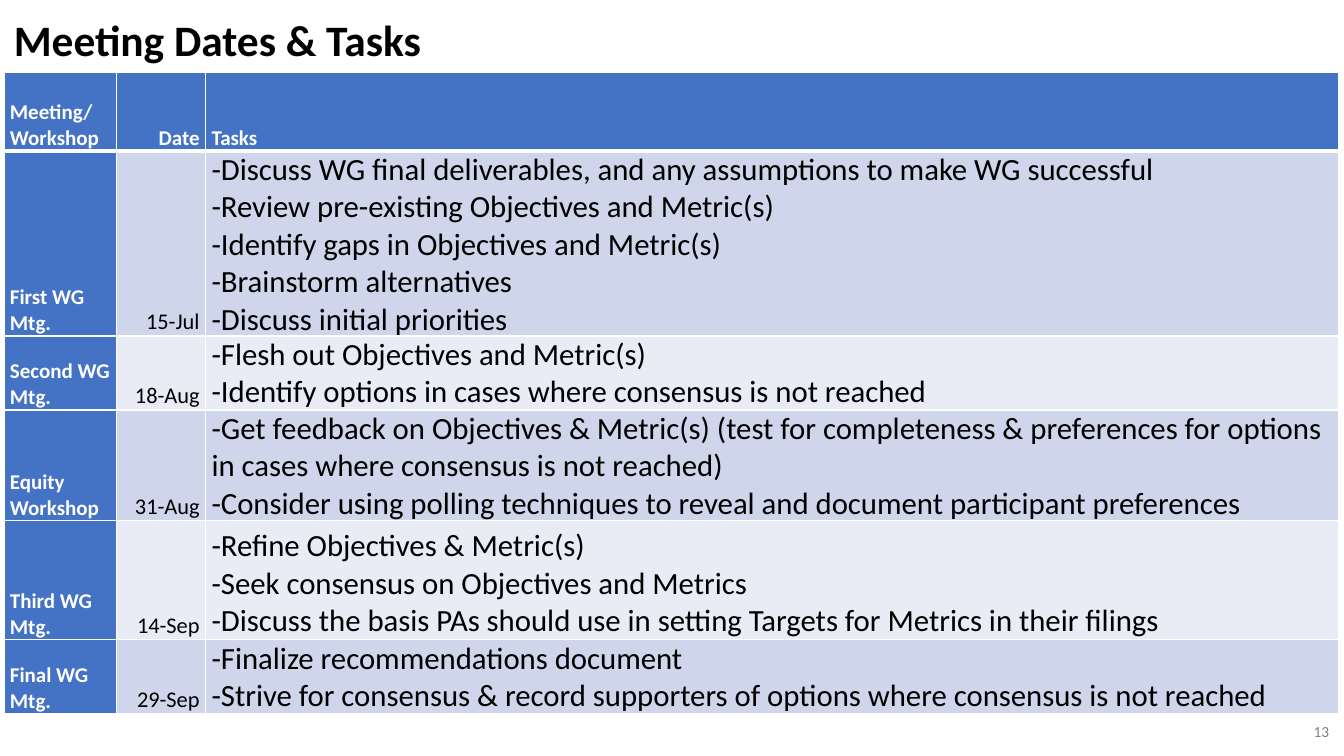
from dataclasses import dataclass

from lxml import etree
from pptx import Presentation
from pptx.dml.color import RGBColor
from pptx.enum.text import MSO_ANCHOR, PP_ALIGN
from pptx.oxml.ns import qn
from pptx.util import Cm, Pt

LEFT, RIGHT = PP_ALIGN.LEFT, PP_ALIGN.RIGHT
MIDDLE, BOTTOM = MSO_ANCHOR.MIDDLE, MSO_ANCHOR.BOTTOM


@dataclass(frozen=True)
class Theme:
    font: str = "Calibri"
    black: str = "000000"
    white: str = "FFFFFF"
    grey: str = "808080"
    blue: str = "4472C4"
    bands: tuple = ("CFD5EA", "E9EBF5")
    title_size: int = 31
    task_size: int = 22
    date_size: int = 16
    head_size: int = 15
    number_size: int = 11


HEADINGS = ("Meeting/ Workshop", "Date", "Tasks")
MEETINGS = [
    ("First WG Mtg.", "15-Jul", [
        "-Discuss WG final deliverables, and any assumptions to make WG successful",
        "-Review pre-existing Objectives and Metric(s)",
        "-Identify gaps in Objectives and Metric(s)",
        "-Brainstorm alternatives",
        "-Discuss initial priorities"]),
    ("Second WG Mtg.", "18-Aug", [
        "-Flesh out Objectives and Metric(s)",
        "-Identify options in cases where consensus is not reached"]),
    ("Equity Workshop", "31-Aug", [
        "-Get feedback on Objectives & Metric(s) (test for completeness & "
        "preferences for options in cases where consensus is not reached)",
        "-Consider using polling techniques to reveal and document participant preferences"]),
    ("Third WG Mtg.", "14-Sep", [
        "-Refine Objectives & Metric(s)",
        "-Seek consensus on Objectives and Metrics",
        "-Discuss the basis PAs should use in setting Targets for Metrics in their filings"]),
    ("Final WG Mtg.", "29-Sep", [
        "-Finalize recommendations document",
        "-Strive for consensus & record supporters of options where consensus is not reached"]),
]
COLUMN_WIDTHS = (2.84, 2.24, 28.55)
ROW_HEIGHTS = (1.98, 4.47, 1.5, 2.26, 3, 1.5)


class SlideBuilder:
    def __init__(self, slide, theme):
        self.s = slide
        self.theme = theme

    def add_lines(self, tf, lines, size, color, bold=False, align=LEFT):
        """Fill a text frame with one paragraph per line."""
        for i, line in enumerate(lines):
            p = tf.paragraphs[0] if i == 0 else tf.add_paragraph()
            p.alignment = align
            r = p.add_run()
            r.text = line
            r.font.name = self.theme.font
            r.font.size = Pt(size)
            r.font.bold = bold
            r.font.color.rgb = RGBColor.from_string(color)

    def text(self, x, y, w, h, line, size, color, **style):
        """Add a one-line text box and return its paragraph."""
        tf = self.s.shapes.add_textbox(Cm(x), Cm(y), Cm(w), Cm(h)).text_frame
        tf.word_wrap = True
        tf.vertical_anchor = MIDDLE
        self.add_lines(tf, [line], size, color, **style)
        return tf.paragraphs[0]

    def table(self, x, y, widths, heights):
        frame = self.s.shapes.add_table(len(heights), len(widths), Cm(x), Cm(y),
                                        Cm(sum(widths)), Cm(sum(heights)))
        table = frame.table
        for column, width in zip(table.columns, widths):
            column.width = Cm(width)
        for row, height in zip(table.rows, heights):
            row.height = Cm(height)
        return table

    def borders(self, cell, top, bottom):
        tc_pr = cell._tc.get_or_add_tcPr()
        for side, width in (("L", 1), ("R", 1), ("T", top), ("B", bottom)):
            ln = etree.SubElement(tc_pr, qn(f"a:ln{side}"), w=str(Pt(width)))
            fill = etree.SubElement(ln, qn("a:solidFill"))
            etree.SubElement(fill, qn("a:srgbClr"), val=self.theme.white)

    def cell(self, cell, lines, fill, size, color, top=1, bottom=1, **style):
        cell.margin_left = cell.margin_right = Cm(0.15)
        cell.margin_top = cell.margin_bottom = 0
        cell.vertical_anchor = BOTTOM
        self.borders(cell, top, bottom)
        cell.fill.solid()
        cell.fill.fore_color.rgb = RGBColor.from_string(fill)
        self.add_lines(cell.text_frame, lines, size, color, **style)


def main():
    prs = Presentation()
    prs.slide_width, prs.slide_height = Cm(33.87), Cm(19.05)
    theme = Theme()
    b = SlideBuilder(prs.slides.add_slide(prs.slide_layouts[6]), theme)

    number = b.text(32.51, 17.93, 1.24, 1.02, "13", theme.number_size, theme.grey, align=RIGHT)
    number.space_after = Pt(6)

    table = b.table(0.1, 1.83, COLUMN_WIDTHS, ROW_HEIGHTS)
    for col, heading in enumerate(HEADINGS):
        b.cell(table.cell(0, col), [heading], theme.blue, theme.head_size, theme.white,
               bottom=3, bold=True, align=RIGHT if heading == "Date" else LEFT)
    for row, (meeting, date, tasks) in enumerate(MEETINGS, 1):
        band = theme.bands[(row - 1) % 2]
        top = 3 if row == 1 else 1
        b.cell(table.cell(row, 0), [meeting], theme.blue, theme.head_size, theme.white,
               top=top, bold=True)
        b.cell(table.cell(row, 1), [date], band, theme.date_size, theme.black,
               top=top, align=RIGHT)
        b.cell(table.cell(row, 2), tasks, band, theme.task_size, theme.black, top=top)

    title = b.text(0.1, 0, 27.89, 2.13, "Meeting Dates & Tasks", theme.title_size,
                   theme.black, bold=True)
    title.line_spacing = 0.9
    prs.save("out.pptx")


if __name__ == "__main__":
    main()
